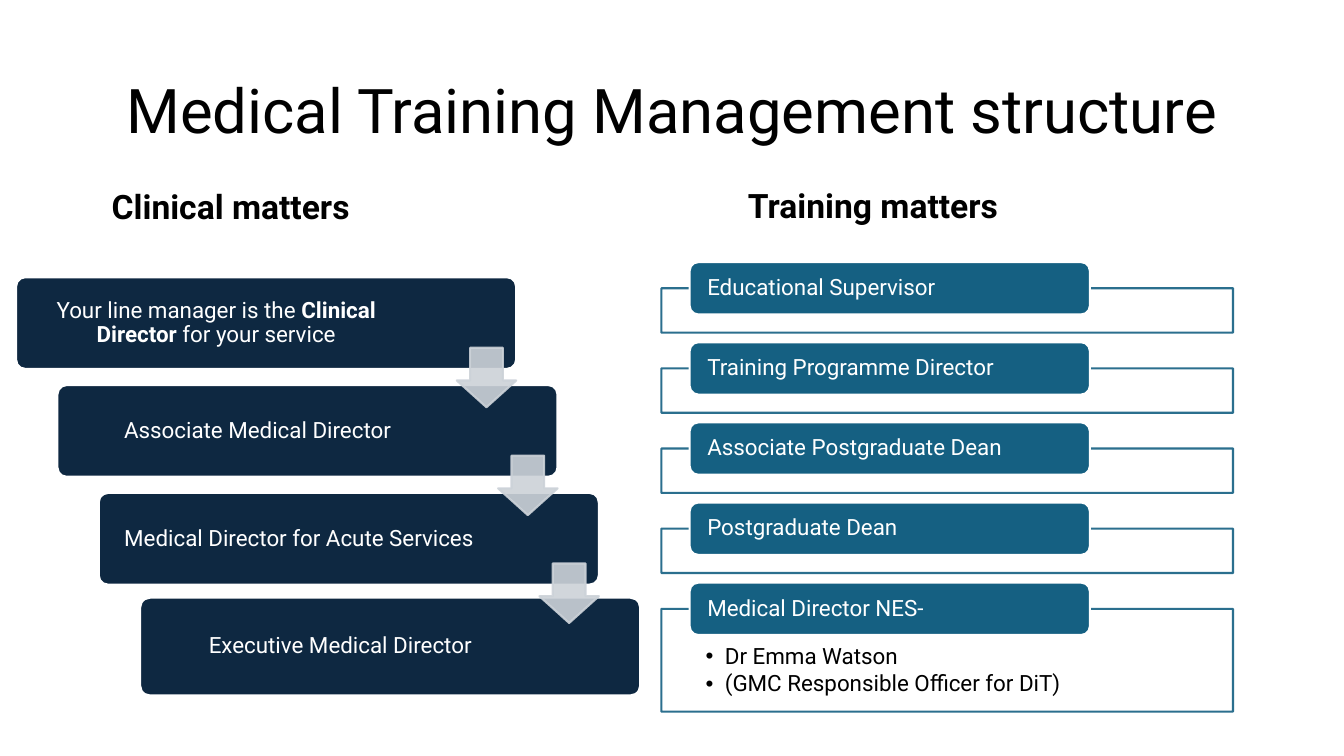
"""Build the medical training management structure slide."""
from dataclasses import dataclass

from lxml.etree import SubElement
from pptx import Presentation
from pptx.dml.color import RGBColor
from pptx.enum.shapes import MSO_SHAPE as SHAPE
from pptx.enum.text import MSO_ANCHOR as ANCHOR, PP_ALIGN as ALIGN
from pptx.oxml.ns import qn
from pptx.util import Inches, Pt

COLORS = {
    "black": "000000",
    "white": "FFFFFF",
    "navy": "0E2841",
    "teal": "156082",
    "silver": "CCD2D8",
}
MARGINS = ("margin_left", "margin_top", "margin_right", "margin_bottom")


@dataclass
class Box:
    x: float
    y: float
    w: float
    h: float


@dataclass
class Heading:
    text: str
    box: Box
    size: int
    bold: bool
    align: ALIGN
    anchor: ANCHOR


@dataclass
class Clinical:
    runs: list[tuple[str, bool]]
    y: float
    h: float = 0.91


@dataclass
class Training:
    role: str
    notes: tuple[str, ...] = ()
    h: float = 0.44


HEADINGS = [
    Heading("Medical Training Management structure", Box(0.92, 0.4, 11.5, 1.45),
            44, False, ALIGN.CENTER, ANCHOR.MIDDLE),
    Heading("Clinical matters", Box(1.01, 1.4, 5.64, 0.9),
            24, True, ALIGN.LEFT, ANCHOR.BOTTOM),
    Heading("Training matters", Box(7.32, 1.39, 5.67, 0.9),
            24, True, ALIGN.LEFT, ANCHOR.BOTTOM),
]
CLINICAL = [
    Clinical([("Your line manager is the ", False), ("Clinical Director ", True),
              ("for your service", False)], 2.75),
    Clinical([("Associate Medical Director", False)], 3.82),
    Clinical([("Medical Director for Acute Services", False)], 4.89),
    Clinical([("Executive Medical Director", False)], 5.93, 0.97),
]
TRAINING = [
    Training("Educational Supervisor"),
    Training("Training Programme Director"),
    Training("Associate Postgraduate Dean"),
    Training("Postgraduate Dean"),
    Training("Medical Director NES-",
             ("Dr Emma Watson", "(GMC Responsible Officer for DiT)"), 1.02),
]


def apply(target, values: dict) -> None:
    for name, value in values.items():
        setattr(target, name, value)


def rgb(color: str) -> RGBColor:
    return RGBColor.from_string(COLORS[color])


def emu(box: Box) -> list:
    return [Inches(v) for v in (box.x, box.y, box.w, box.h)]


def add_box(slide, kind: SHAPE, box: Box, fill: str, line: str,
            adj: tuple[float, ...] = (), alpha: int = 100):
    sp = slide.shapes.add_shape(kind, *emu(box))
    sp.shadow.inherit = False
    sp.fill.solid()
    sp.fill.fore_color.rgb = rgb(fill)
    sp.line.color.rgb = rgb(line)
    sp.line.width = Pt(1.5)
    for i, value in enumerate(adj):
        sp.adjustments[i] = value
    if alpha < 100:
        for clr in sp._element.spPr.iter(qn("a:srgbClr")):
            SubElement(clr, qn("a:alpha"), val=str(alpha * 1000))
    return sp


def set_frame(tf, anchor: ANCHOR, insets: tuple[float, ...]) -> None:
    apply(tf, {"word_wrap": True, "vertical_anchor": anchor})
    apply(tf, {name: Inches(v) for name, v in zip(MARGINS, insets)})


def write(p, runs: list[tuple[str, bool]], size: int, color: str,
          align: ALIGN = ALIGN.LEFT) -> None:
    apply(p, {"alignment": align, "line_spacing": 0.9})
    for text, bold in runs:
        r = p.add_run()
        r.text = text
        apply(r.font, {"name": "Roboto", "size": Pt(size), "bold": bold})
        r.font.color.rgb = rgb(color)


def add_bullet(p) -> None:
    pPr = p._p.get_or_add_pPr()
    pPr.set("marL", str(Inches(0.19)))
    pPr.set("indent", str(Inches(-0.19)))
    SubElement(pPr, qn("a:buFont"), typeface="Arial")
    SubElement(pPr, qn("a:buChar"), char="•")


def draw_heading(slide, item: Heading) -> None:
    tf = slide.shapes.add_textbox(*emu(item.box)).text_frame
    set_frame(tf, item.anchor, (0.1, 0.05, 0.1, 0.05))
    write(tf.paragraphs[0], [(item.text, item.bold)], item.size, "black", item.align)


def draw_training(slide, item: Training, y: float) -> None:
    panel = add_box(slide, SHAPE.RECTANGLE, Box(6.56, y, 5.67, item.h),
                    "white", "teal", alpha=90)
    if item.notes:
        tf = panel.text_frame
        set_frame(tf, ANCHOR.TOP, (0.44, 0.36, 0.44, 0.12))
        for i, note in enumerate(item.notes):
            p = tf.add_paragraph() if i else tf.paragraphs[0]
            add_bullet(p)
            write(p, [(note, False)], 16, "black")
            p.space_after = Pt(2.4)
    tab = add_box(slide, SHAPE.ROUNDED_RECTANGLE, Box(6.84, y - 0.26, 3.97, 0.52),
                  "teal", "white")
    set_frame(tab.text_frame, ANCHOR.MIDDLE, (0.15, 0, 0.15, 0))
    write(tab.text_frame.paragraphs[0], [(item.role, False)], 16, "white")


def draw_clinical(slide, item: Clinical, x: float) -> None:
    card = add_box(slide, SHAPE.ROUNDED_RECTANGLE, Box(x, item.y, 4.96, item.h),
                   "navy", "white", (0.1,))
    set_frame(card.text_frame, ANCHOR.MIDDLE, (0.07, 0.07, 1.06, 0.07))
    write(card.text_frame.paragraphs[0], item.runs, 16, "white", ALIGN.CENTER)


def main() -> None:
    prs = Presentation()
    apply(prs, {"slide_width": Inches(13.33), "slide_height": Inches(7.5)})
    s = prs.slides.add_slide(prs.slide_layouts[6])
    for heading in HEADINGS:
        draw_heading(s, heading)
    for i, step in enumerate(TRAINING):
        draw_training(s, step, 2.86 + 0.795 * i)
    for i, step in enumerate(CLINICAL):
        draw_clinical(s, step, 0.16 + 0.41 * i)
    for i in range(len(CLINICAL) - 1):
        add_box(s, SHAPE.DOWN_ARROW, Box(4.53 + 0.41 * i, 3.45 + 1.07 * i, 0.59, 0.59),
                "silver", "silver", (0.55, 0.45), alpha=90)
    prs.save("out.pptx")


if __name__ == "__main__":
    main()
